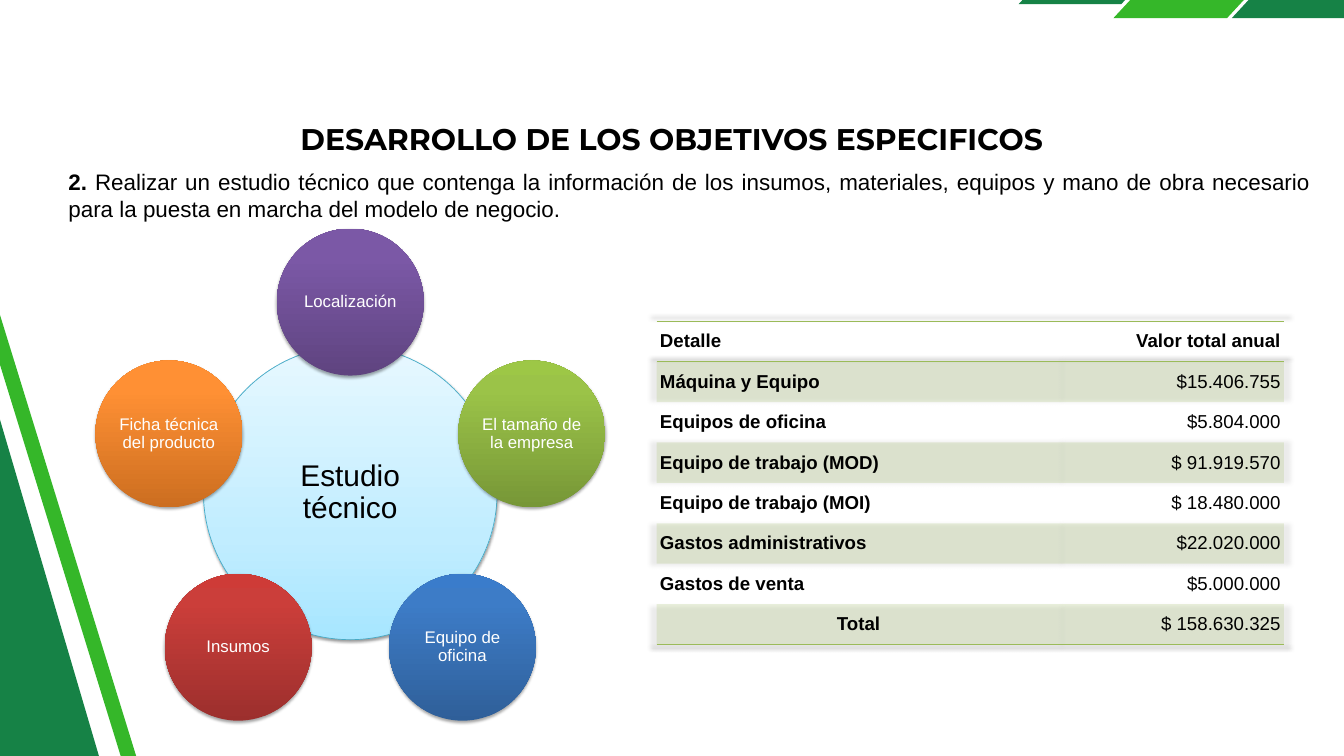
import dataclasses
import math
import typing

import lxml.etree
import pptx
import pptx.dml.color
import pptx.enum.shapes
import pptx.enum.text
import pptx.oxml
import pptx.oxml.ns
import pptx.util

Pt = pptx.util.Pt
Align = pptx.enum.text.PP_ALIGN
Anchor = pptx.enum.text.MSO_ANCHOR
qn = pptx.oxml.ns.qn

COLORS = {
    "dark green": "168246", "green": "35B729", "black": "000000", "white": "FFFFFF",
    "hub line": "46AAC5", "table": "9BBB59",
}
BAND_ALPHA = 20
BODY_FONT = "Arial"


@dataclasses.dataclass
class Stripe:
    color: str
    points: list[tuple[float, float]]


@dataclasses.dataclass
class Circle:
    text: str
    stops: list[tuple[int, str]]
    diameter: float = 157.4
    inset: float = 2.2
    size: float = 18
    color: str = "white"
    line: typing.Optional[str] = None
    shadow_alpha: int = 35


@dataclasses.dataclass
class TableRow:
    label: str
    value: str
    label_align: Align = Align.LEFT
    value_bold: bool = False
    banded: bool = False
    borders: tuple[str, ...] = ()


STRIPES = [
    Stripe("dark green", [(1152.5, -62), (1262, -62), (1201.5, 4.3), (1091.5, 4.3)]),
    Stripe("green", [(1281.6, -76.3), (1403.3, -76.3), (1314.7, 19.4), (1193, 19.4)]),
    Stripe("dark green", [(1408.3, -76.3), (1530, -76.3), (1441.4, 19.4), (1319.8, 19.4)]),
    Stripe("dark green", [(-141.8, 1247), (-475.2, 113), (-128.9, 11.5), (204.5, 1144.8)]),
    Stripe("green", [(247.7, 1193.8), (-100.8, 64.1), (-85.7, 59.8), (262.8, 1188.7)]),
]
HUB = Circle("Estudio técnico", [(0, "A7E6FF"), (35, "C1EDFF"), (100, "E7F8FF")],
             diameter=314.6, inset=7, size=32, color="black", line="hub line", shadow_alpha=38)
SATELLITES = [
    Circle("Localización", [(0, "5F4480"), (80, "7B58A6"), (100, "7C57A8")]),
    Circle("El tamaño de la empresa", [(0, "779737"), (80, "9BC348"), (100, "9DC746")]),
    Circle("Equipo de oficina", [(0, "2F5F99"), (80, "3D7CC7"), (100, "3A7CCB")]),
    Circle("Insumos", [(0, "9C2F2D"), (80, "CB3E3A"), (100, "CE3B37")]),
    Circle("Ficha técnica del producto", [(0, "CC6E20"), (80, "FF9034"), (100, "FF9136")]),
]
HUB_CENTER = (375.3, 528.1)
ORBIT_RADIUS = 204.4
COST_ROWS = [
    TableRow("Detalle", "Valor total anual", value_bold=True, borders=("lnT", "lnB")),
    TableRow("Máquina y Equipo", "$15.406.755", banded=True),
    TableRow("Equipos de oficina", "$5.804.000"),
    TableRow("Equipo de trabajo (MOD)", "$ 91.919.570", banded=True),
    TableRow("Equipo de trabajo (MOI)", "$ 18.480.000"),
    TableRow("Gastos administrativos", "$22.020.000", banded=True),
    TableRow("Gastos de venta", "$5.000.000"),
    TableRow("Total", "$ 158.630.325", Align.CENTER, banded=True, borders=("lnB",)),
]


def rgb(name: str) -> pptx.dml.color.RGBColor:
    return pptx.dml.color.RGBColor.from_string(COLORS[name])


def set_values(target, values: dict) -> None:
    for name, value in values.items():
        setattr(target, name, value)


def margins(horizontal: float, vertical: float) -> dict:
    return {"margin_left": Pt(horizontal), "margin_right": Pt(horizontal),
            "margin_top": Pt(vertical), "margin_bottom": Pt(vertical)}


def add_child(parent, tag: str, **attributes):
    return lxml.etree.SubElement(parent, qn(tag), {k: str(v) for k, v in attributes.items()})


def add_color(parent, color: str, alpha: typing.Optional[int] = None) -> None:
    node = add_child(parent, "a:srgbClr", val=color)
    if alpha is not None:
        add_child(node, "a:alpha", val=alpha * 1000)


def add_span(para, text: str, size: float, color: str = "black", bold: bool = False,
             font: str = BODY_FONT) -> None:
    span = para.add_run()
    span.text = text
    set_values(span.font, {"name": font, "size": Pt(size), "bold": bold})
    span.font.color.rgb = rgb(color)


def draw_stripe(page, stripe: Stripe) -> None:
    corners = [(Pt(x), Pt(y)) for x, y in stripe.points]
    builder = page.shapes.build_freeform(*corners[0])
    builder.add_line_segments(corners[1:], close=True)
    shape = builder.convert_to_shape()
    shape.shadow.inherit = False
    shape.fill.solid()
    shape.fill.fore_color.rgb = rgb(stripe.color)
    shape.line.fill.background()


def add_text_box(page, left: float, top: float, width: float, height: float,
                 align: Align, inset: tuple[float, float]):
    """Add a wrapping text box and return its first paragraph."""
    frame = page.shapes.add_textbox(Pt(left), Pt(top), Pt(width), Pt(height)).text_frame
    set_values(frame, {"word_wrap": True, **margins(*inset)})
    para = frame.paragraphs[0]
    para.alignment = align
    return para


def draw_circle(page, circle: Circle, center_x: float, center_y: float) -> None:
    side = Pt(circle.diameter)
    shape = page.shapes.add_shape(
        pptx.enum.shapes.MSO_SHAPE.OVAL, Pt(center_x - circle.diameter / 2),
        Pt(center_y - circle.diameter / 2), side, side)
    shape.fill.gradient()
    shape.fill.gradient_angle = 90
    stop_list = shape._element.spPr.find(".//" + qn("a:gsLst"))
    for stop in list(stop_list):
        stop_list.remove(stop)
    for position, color in circle.stops:
        add_color(add_child(stop_list, "a:gs", pos=position * 1000), color)
    if circle.line:
        shape.line.color.rgb = rgb(circle.line)
        shape.line.width = Pt(0.75)
    else:
        shape.line.fill.background()
    shape.shadow.inherit = False
    effects = shape._element.spPr.find(qn("a:effectLst"))
    shadow = add_child(effects, "a:outerShdw", blurRad=Pt(3.1), dist=Pt(1.8),
                       dir=5400000, rotWithShape=0)
    add_color(shadow, COLORS["black"], circle.shadow_alpha)

    frame = shape.text_frame
    set_values(frame, {"word_wrap": True, "vertical_anchor": Anchor.MIDDLE,
                       **margins(circle.inset, circle.inset)})
    para = frame.paragraphs[0]
    set_values(para, {"alignment": Align.CENTER, "line_spacing": 0.9})
    add_span(para, circle.text, circle.size, circle.color)


def fill_cell(cell, row: TableRow, text: str, align: Align, bold: bool) -> None:
    set_values(cell, {"vertical_anchor": Anchor.MIDDLE, **margins(3.6, 0)})
    properties = cell._tc.get_or_add_tcPr()
    for side in row.borders:
        border = add_child(properties, "a:" + side, w=Pt(1))
        add_color(add_child(border, "a:solidFill"), COLORS["table"])
    if row.banded:
        add_color(add_child(properties, "a:solidFill"), COLORS["table"], BAND_ALPHA)
    else:
        cell.fill.background()
    para = cell.text_frame.paragraphs[0]
    set_values(para, {"alignment": align, "space_after": Pt(20)})
    add_span(para, text, 20, bold=bold)


def draw_cost_table(page) -> None:
    height = 43.3
    frame = page.shapes.add_table(len(COST_ROWS), 2, Pt(703.5), Pt(344.2), Pt(672.2),
                                  Pt(height * len(COST_ROWS)))
    table = frame.table
    set_values(table, {"first_row": False, "horz_banding": False})
    properties = table._tbl.tblPr
    properties.find(qn("a:tableStyleId")).text = "{2D5ABB26-0587-4C30-8999-92F81FD0307C}"
    effects = pptx.oxml.parse_xml(
        '<a:effectLst xmlns:a="http://schemas.openxmlformats.org/drawingml/2006/main"/>')
    properties.insert(0, effects)
    shadow = add_child(effects, "a:outerShdw", blurRad=Pt(5), sx=102000, sy=102000,
                       algn="ctr", rotWithShape=0)
    add_color(shadow, COLORS["black"], 40)
    for column, width in zip(table.columns, (432.6, 239.6)):
        column.width = Pt(width)
    for index, row in enumerate(COST_ROWS):
        table.rows[index].height = Pt(height)
        fill_cell(table.cell(index, 0), row, row.label, row.label_align, True)
        fill_cell(table.cell(index, 1), row, row.value, Align.RIGHT, row.value_bold)


def main() -> None:
    deck = pptx.Presentation()
    set_values(deck, {"slide_width": Pt(1440), "slide_height": Pt(810)})
    page = deck.slides.add_slide(deck.slide_layouts[6])
    for stripe in STRIPES:
        draw_stripe(page, stripe)

    objective = add_text_box(page, 66.2, 176.4, 1344.2, 65.5, Align.JUSTIFY, (7.2, 3.6))
    add_span(objective, "2. ", 24, bold=True)
    add_span(objective, "Realizar un estudio técnico que contenga la información de los insumos, "
             "materiales, equipos y mano de obra necesario para la puesta en marcha del "
             "modelo de negocio.", 24)
    title = add_text_box(page, 218.9, 129.6, 1002.2, 38.9, Align.CENTER, (0, 0))
    add_span(title, "DESARROLLO DE LOS OBJETIVOS ESPECIFICOS", 32, bold=True, font="Montserrat")

    draw_circle(page, HUB, *HUB_CENTER)
    for index, circle in enumerate(SATELLITES):
        angle = math.tau * index / len(SATELLITES)
        draw_circle(page, circle, HUB_CENTER[0] + ORBIT_RADIUS * math.sin(angle),
                    HUB_CENTER[1] - ORBIT_RADIUS * math.cos(angle))
    draw_cost_table(page)
    deck.save("out.pptx")


if __name__ == "__main__":
    main()
